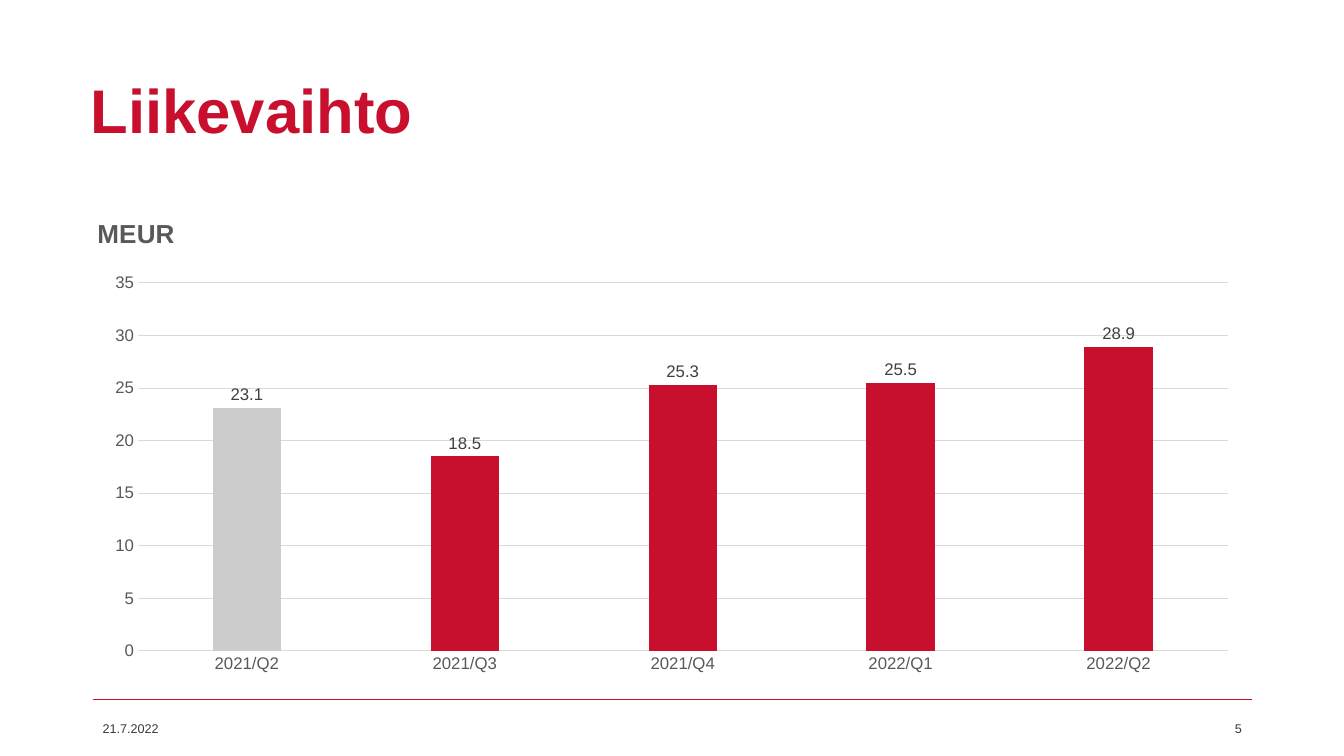
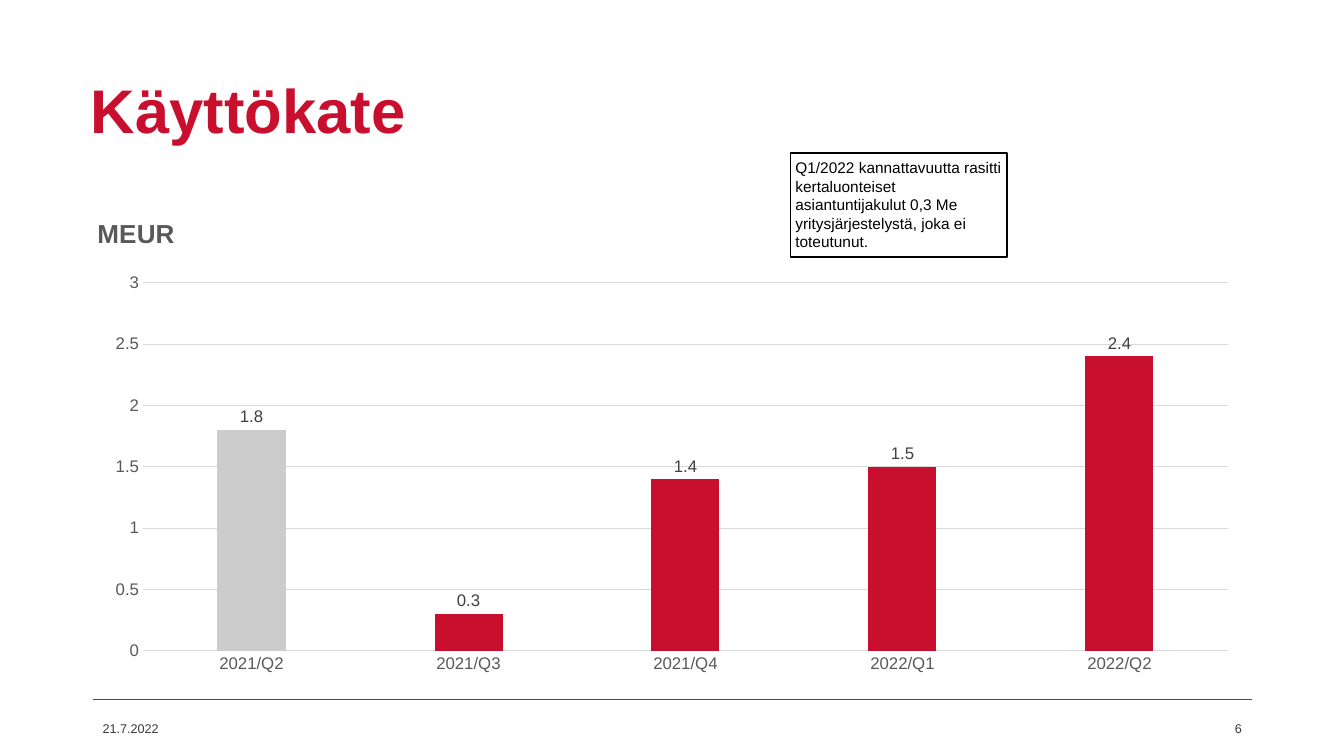
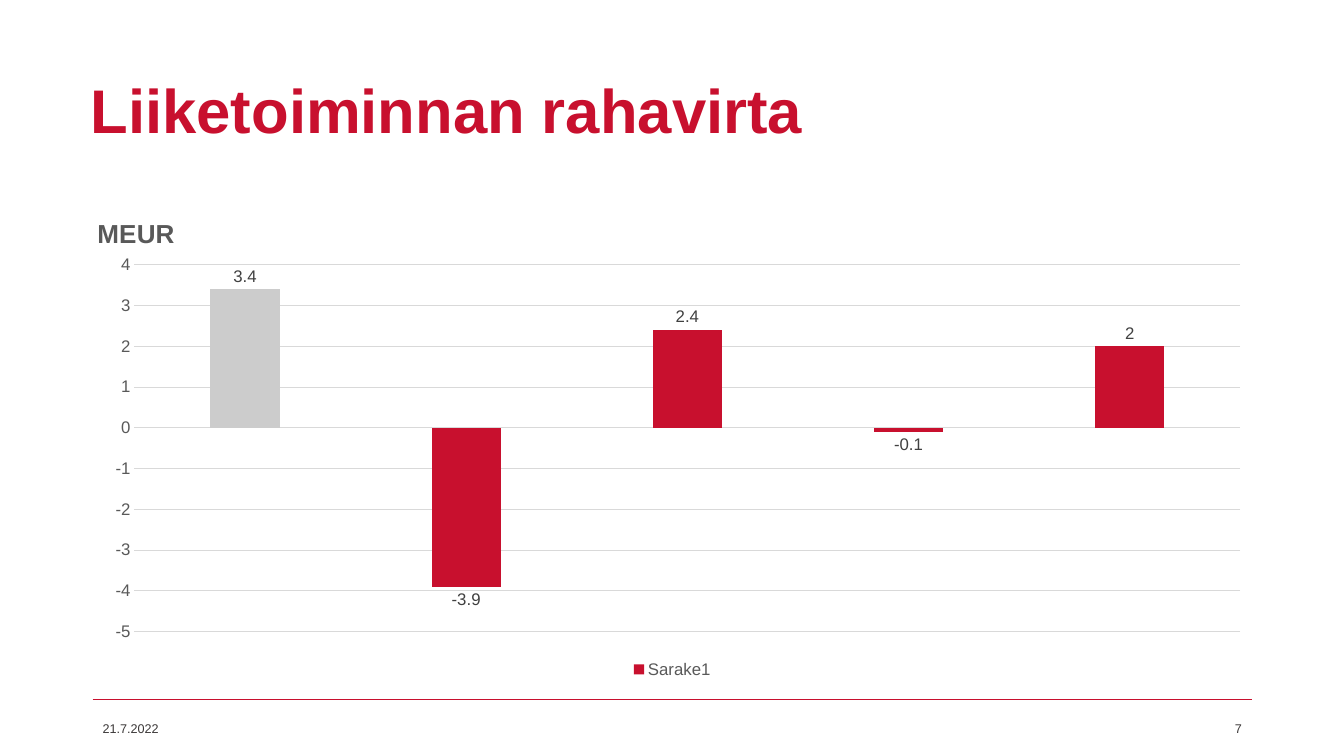
from dataclasses import dataclass

from lxml import etree
from pptx import Presentation
from pptx import util as u
from pptx.chart import data
from pptx.dml import color
from pptx.enum import chart as ce
from pptx.enum import shapes, text
from pptx.oxml import ns


@dataclass(frozen=True)
class Theme:
    red: str = "C8102E"
    grey: str = "CCCCCC"
    grid: str = "D9D9D9"
    axis: str = "595959"
    label: str = "404040"
    foot: str = "3B3838"
    black: str = "000000"
    font: str = "Arial"
    base: str = "Calibri"
    head: float = 44
    unit: float = 18.6
    tick: float = 12
    note: float = 11
    plain: float = 10
    small: float = 9


LEFT, WIDE, RULE = 6.9, 86.25, 92.53
CHART = (LEFT, 27.07, WIDE, 63.2)
UNIT = (0, 1.5)


class Deck:
    def __init__(self, theme):
        self.theme = theme
        self.prs = Presentation()
        self.prs.slide_width = u.Inches(13.33)
        self.prs.slide_height = u.Inches(7.5)
        self.slide = None

    def box(self, x, y, w, h):
        full, tall = self.prs.slide_width, self.prs.slide_height
        return [int(part * side / 100)
                for part, side in ((x, full), (y, tall), (w, full), (h, tall))]

    def style(self, font, size, tint, bold=False, face=None):
        font.name = face or self.theme.font
        font.size = u.Pt(size)
        font.bold = bold
        font.color.rgb = color.RGBColor.from_string(tint)

    def stroke(self, line, tint, width):
        line.color.rgb = color.RGBColor.from_string(tint)
        line.width = u.Pt(width)

    def paint(self, item, tint):
        item.format.fill.solid()
        item.format.fill.fore_color.rgb = color.RGBColor.from_string(tint)

    def label(self, frame, words, size, tint, bold=False, side="LEFT", mid=True):
        frame.word_wrap = True
        frame.vertical_anchor = text.MSO_ANCHOR.MIDDLE if mid else text.MSO_ANCHOR.TOP
        para = frame.paragraphs[0]
        para.alignment = text.PP_ALIGN[side]
        run = para.add_run()
        run.text = words
        self.style(run.font, size, tint, bold)
        return para

    def page(self, title, number):
        t = self.theme
        self.slide = self.prs.slides.add_slide(self.prs.slide_layouts[5])
        head = self.slide.shapes.title
        head.left, head.top, head.width, head.height = self.box(6, 5.33, WIDE, 19.33)
        para = self.label(head.text_frame, title, t.head, t.red, True)
        para.line_spacing = 0.9
        self.rule()
        self.foot("21.7.2022", LEFT, "LEFT")
        self.foot(str(number), LEFT + WIDE - 22.5, "RIGHT")

    def rule(self):
        x, y, w, _ = self.box(LEFT, RULE, WIDE, 0)
        line = self.slide.shapes.add_connector(
            shapes.MSO_CONNECTOR.STRAIGHT, x, y, x + w, y)
        self.stroke(line.line, self.theme.red, 1.25)
        etree.SubElement(line._element.spPr, ns.qn("a:effectLst"))

    def foot(self, words, x, side):
        area = self.slide.shapes.add_textbox(*self.box(x, 92.67, 22.5, 7.33))
        self.label(area.text_frame, words, self.theme.small, self.theme.foot, side=side)

    def note(self, words, *place):
        t = self.theme
        area = self.slide.shapes.add_shape(
            shapes.MSO_SHAPE.RECTANGLE, *self.box(*place))
        area.shadow.inherit = False
        area.fill.background()
        self.stroke(area.line, t.black, 1)
        frame = area.text_frame
        frame.margin_left = frame.margin_right = u.Inches(0.05)
        frame.margin_top = frame.margin_bottom = u.Inches(0.05)
        self.label(frame, words, t.note, t.black, mid=False)

    def place(self, node, spot, index, inner=False):
        for old in node.findall(ns.qn("c:layout")):
            node.remove(old)
        lay = etree.Element(ns.qn("c:layout"))
        node.insert(index, lay)
        form = etree.SubElement(lay, ns.qn("c:manualLayout"))
        pairs = [("layoutTarget", "inner")] if inner else []
        pairs += [("xMode", "edge"), ("yMode", "edge")]
        pairs += [(key, f"{part / 100:.4f}") for key, part in zip("xywh", spot)]
        for key, val in pairs:
            etree.SubElement(form, ns.qn("c:" + key)).set("val", val)

    def chart(self, cats, name, vals, scale, plot, legend=False):
        t = self.theme
        info = data.CategoryChartData()
        info.categories = cats
        info.add_series(name, vals)
        chart = self.slide.shapes.add_chart(
            ce.XL_CHART_TYPE.COLUMN_CLUSTERED, *self.box(*CHART), info).chart
        self.style(chart.font, t.plain, t.black, face=t.base)
        chart.has_title = True
        run = chart.chart_title.text_frame.paragraphs[0].add_run()
        run.text = "MEUR"
        self.style(run.font, t.unit, t.axis, True)
        self.place(chart.chart_title._element, UNIT, 1)
        self.place(chart._chartSpace.chart.plotArea, plot, 0, True)
        self.axes(chart, scale, legend)
        self.bars(chart.plots[0])
        chart.has_legend = legend
        if legend:
            chart.legend.position = ce.XL_LEGEND_POSITION.BOTTOM
            chart.legend.include_in_layout = False
            self.style(chart.legend.font, t.tick, t.axis)

    def axes(self, chart, scale, bare):
        t = self.theme
        cat, val = chart.category_axis, chart.value_axis
        for axis in (cat, val):
            axis.major_tick_mark = axis.minor_tick_mark = ce.XL_TICK_MARK.NONE
            self.style(axis.tick_labels.font, t.tick, t.axis)
        cat.visible = not bare
        self.stroke(cat.format.line, t.grid, 0.75)
        val.format.line.fill.background()
        val.has_major_gridlines = True
        self.stroke(val.major_gridlines.format.line, t.grid, 0.75)
        val.minimum_scale, val.maximum_scale, val.major_unit = scale

    def bars(self, plot):
        t = self.theme
        plot.gap_width, plot.overlap = 219, -27
        plot.vary_by_categories = False
        row = plot.series[0]
        row.invert_if_negative = False
        self.paint(row, t.red)
        self.paint(row.points[0], t.grey)
        tags = row.data_labels
        tags.show_value = True
        tags.position = ce.XL_LABEL_POSITION.OUTSIDE_END
        self.style(tags.font, t.tick, t.label)


def main():
    deck = Deck(Theme())
    terms = ["2021/Q2", "2021/Q3", "2021/Q4", "2022/Q1", "2022/Q2"]

    deck.page("Liikevaihto", 5)
    deck.chart(terms, "Series 1", [23.1, 18.5, 25.3, 25.5, 28.9],
               (0, 35, 5), (3.9, 16.4, 94, 77))

    deck.page("Käyttökate", 6)
    deck.chart(terms, "Series 1", [1.8, 0.3, 1.4, 1.5, 2.4],
               (0, 3, 0.5), (4.34, 16.4, 93.6, 77))
    deck.note("Q1/2022 kannattavuutta rasitti kertaluonteiset asiantuntijakulut "
              "0,3 Me yritysjärjestelystä, joka ei toteutunut.",
              58.8, 20.27, 16.13, 13.73)

    deck.page("Liiketoiminnan rahavirta", 7)
    deck.chart(["1", "2", "3", "4", "5"], "Sarake1", [3.4, -3.9, 2.4, -0.1, 2],
               (-5, 4, 1), (3.6, 12.6, 95.4, 76.8), legend=True)

    deck.prs.save("out.pptx")


if __name__ == "__main__":
    main()
